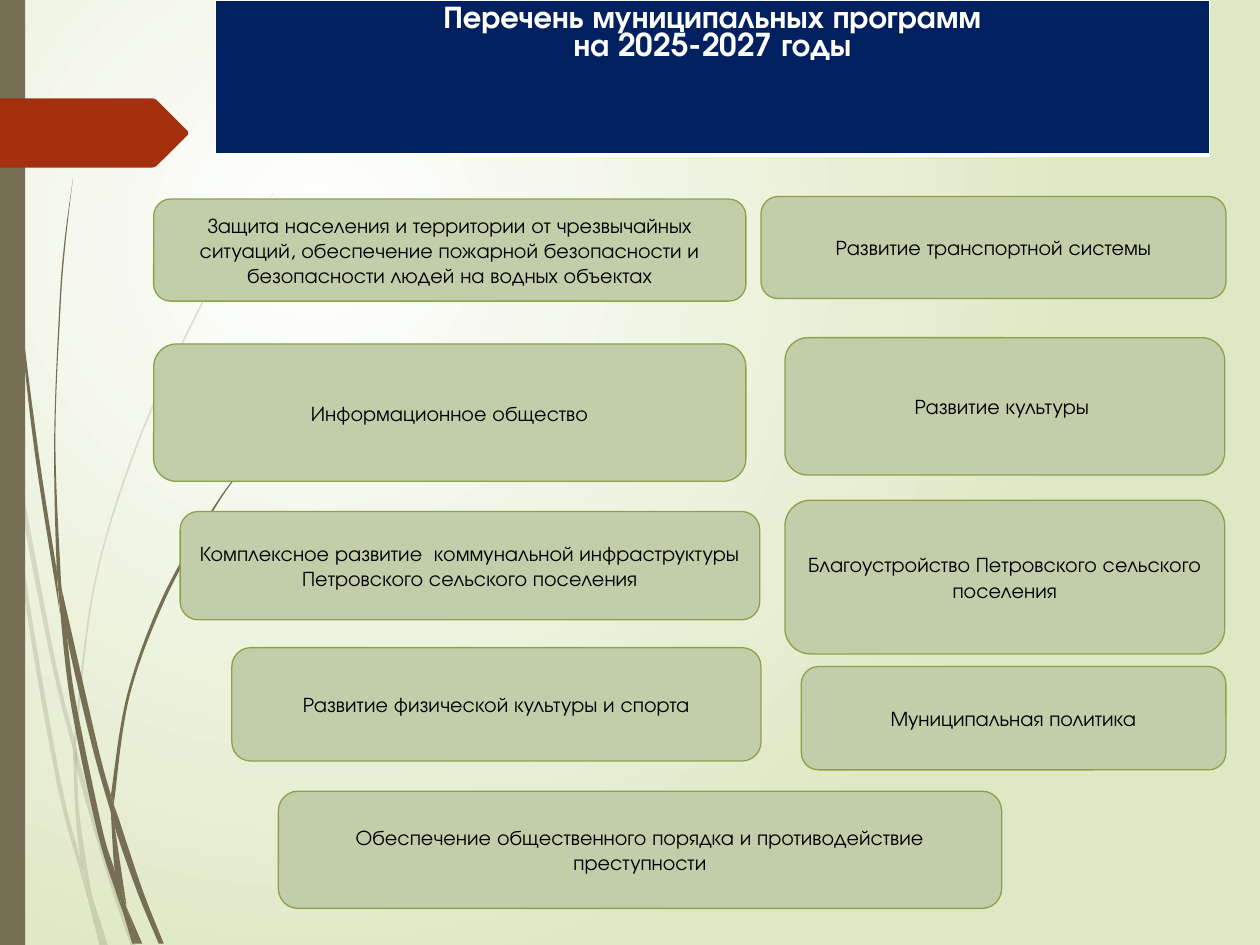
from typing import NamedTuple

from lxml.etree import SubElement
from pptx import Presentation
from pptx.dml.color import RGBColor as Rgb
from pptx.enum.lang import MSO_LANGUAGE_ID as Language
from pptx.enum.shapes import MSO_SHAPE as Shape
from pptx.enum.text import MSO_ANCHOR as Anchor, PP_ALIGN as Align
from pptx.oxml.ns import qn
from pptx.util import Inches, Pt

# The slide is a grid of 1000 columns by 750 rows
COLUMNS, ROWS = 1000, 750
CELL = Inches(10) // COLUMNS
COLOURS = {
    "white": "FFFFFF", "meadow": "DFE8C4", "bark": "766F54", "rust": "A53010",
    "navy": "002060", "sage": "C2CEA9", "leaf": "8BA249", "black": "000000",
}
TEXT_FORMAT = {"name": "TeX Gyre Adventor", "language_id": Language.RUSSIAN}
TITLE_FORMAT = TEXT_FORMAT | {"size": Pt(18), "bold": True}
LABEL_FORMAT = TEXT_FORMAT | {"size": Pt(12), "bold": False}
Points = list[tuple[int, int]]


class Area(NamedTuple):
    column: int
    row: int
    columns: int
    rows: int

    def lengths(self) -> list[int]:
        return [value * CELL for value in self]


class Program(NamedTuple):
    label: str
    area: Area


class Blade(NamedTuple):
    """A sliver of grass: one smooth edge out, one smooth edge back."""
    out: Points
    back: Points


PROGRAMS = [
    Program("Защита населения и территории от чрезвычайных ситуаций, обеспечение пожарной "
            "безопасности и безопасности людей на водных объектах", Area(122, 158, 470, 81)),
    Program("Развитие транспортной системы", Area(604, 156, 369, 81)),
    Program("Развитие культуры ", Area(623, 268, 349, 109)),
    Program("Благоустройство Петровского сельского поселения", Area(623, 397, 349, 122)),
    Program("Информационное общество", Area(122, 273, 470, 109)),
    Program("Комплексное развитие  коммунальной инфраструктуры Петровского сельского поселения",
            Area(143, 406, 460, 86)),
    Program("Развитие физической культуры и спорта", Area(184, 514, 420, 90)),
    Program("Муниципальная политика", Area(636, 529, 337, 82)),
    Program("Обеспечение общественного порядка и противодействие преступности",
            Area(221, 628, 574, 93)),
]
PALE_GRASS = [
    Blade([(8, 350), (6, 322), (0, 282)], [(0, 299), (7, 344), (8, 350)]),
    Blade([(10, 345), (12, 376), (40, 522), (59, 599)], [(59, 586), (43, 520), (10, 345)]),
    Blade([(61, 596), (61, 610), (85, 694), (104, 751)], [(108, 751), (88, 692), (64, 607), (61, 596)]),
    Blade([(73, 711), (83, 751)], [(86, 751), (73, 711)]),
    Blade([(8, 350), (19, 470), (45, 621), (64, 693), (70, 714)],
          [(69, 707), (64, 683), (48, 619), (22, 469), (12, 376), (8, 350)]),
    Blade([(58, 599), (60, 646), (64, 683), (67, 692), (73, 711)],
          [(72, 706), (63, 646), (61, 610), (58, 599)]),
    Blade([(61, 596), (61, 584), (76, 462), (111, 349), (159, 245), (187, 198), (201, 175), (217, 154)],
          [(217, 153), (201, 175), (186, 197), (158, 244), (110, 348), (75, 461), (59, 584), (59, 586)]),
    Blade([(70, 714), (79, 751)], [(82, 751), (70, 714)]),
    Blade([(61, 608), (61, 610), (61, 596), (59, 586)], [(58, 599), (61, 608)]),
    Blade([(65, 683), (69, 707), (70, 714), (82, 751)], [(83, 751), (73, 711), (67, 692)]),
]
DARK_GRASS = [
    Blade([(2, 0), (3, 48), (5, 110), (14, 233), (27, 355), (46, 477), (47, 481)],
          [(45, 457), (45, 453), (30, 355), (15, 232), (6, 109), (4, 48), (3, 0)]),
    Blade([(50, 472), (53, 505), (73, 592), (88, 645)], [(88, 631), (77, 590), (50, 472)]),
    Blade([(91, 641), (91, 656), (109, 708), (126, 749)], [(130, 749), (113, 706), (94, 649), (91, 641)]),
    Blade([(47, 477), (56, 557), (77, 659), (92, 708), (97, 722)],
          [(96, 717), (91, 691), (81, 657), (60, 556), (53, 505), (47, 477)]),
    Blade([(50, 472), (48, 453), (44, 349), (48, 245), (52, 193), (58, 141)],
          [(58, 141), (51, 193), (47, 245), (43, 349), (45, 449), (49, 472)]),
    Blade([(100, 719), (110, 749)], [(113, 749), (100, 719)]),
    Blade([(47, 477), (53, 505), (50, 472)], [(49, 472), (45, 449), (45, 453), (47, 477)]),
    Blade([(91, 641), (91, 633), (103, 552), (131, 476), (169, 406), (191, 374), (203, 359), (216, 344)],
          [(215, 344), (203, 358), (191, 373), (168, 405), (129, 474), (101, 551), (88, 631)]),
    Blade([(97, 722), (105, 749)], [(108, 749), (97, 722)]),
    Blade([(88, 645), (91, 691), (96, 706), (100, 719)], [(100, 716), (91, 656), (90, 651), (88, 645)]),
    Blade([(88, 631), (88, 645), (90, 651), (91, 656)], [(91, 641), (88, 631)]),
    Blade([(91, 691), (96, 717), (97, 722), (108, 749)], [(110, 749), (100, 719), (96, 706)]),
]
ARROW = [(0, 78), (121, 78), (124, 79), (149, 104), (149, 107), (124, 132), (121, 133), (0, 133)]


def colour(name: str) -> Rgb:
    return Rgb.from_string(COLOURS[name])


def paint(item, fill: str, line: str | None = None) -> None:
    item.shadow.inherit = False
    item.fill.solid()
    item.fill.fore_color.rgb = colour(fill)
    if line:
        item.line.color.rgb = colour(line)
        item.line.width = Pt(0.75)
    else:
        item.line.fill.background()


def write(frame, lines: list[str], formats: dict, ink: str, spacing: float | None = None) -> None:
    frame.word_wrap = True
    for index, line in enumerate(lines):
        para = frame.add_paragraph() if index else frame.paragraphs[0]
        para.alignment, para.line_spacing = Align.CENTER, spacing
        span = para.add_run()
        span.text = line
        for name, value in formats.items():
            setattr(span.font, name, value)
        span.font.color.rgb = colour(ink)


def draw_outline(shapes, points: Points, fill: str):
    builder = shapes.build_freeform(*points[0], scale=CELL)
    builder.add_line_segments(points[1:], close=True)
    outline = builder.convert_to_shape()
    paint(outline, fill)
    return outline


def bend(lines: list, edge: Points, left: int, top: int) -> None:
    """Turn the straight segments of an edge into Bezier curves."""
    padded = [edge[0], *edge, edge[-1]]
    for line, a, b, c, d in zip(lines, padded, padded[1:], padded[2:], padded[3:]):
        first = [q + (r - p) / 6 for p, q, r in zip(a, b, c)]
        second = [q - (r - p) / 6 for p, q, r in zip(b, c, d)]
        line.tag = qn("a:cubicBezTo")
        line.remove(line[0])
        for x, y in (first, second, c):
            SubElement(line, qn("a:pt"), x=str(round((x - left) * CELL)), y=str(round((y - top) * CELL)))


def draw_grass(page, blades: list[Blade], opacity: int) -> None:
    group = page.shapes.add_group_shape()
    for blade in blades:
        points = blade.out + blade.back
        outline = draw_outline(group.shapes, points, "bark")
        left, top = (min(axis) for axis in zip(*points))
        route = outline._element.find(".//" + qn("a:path"))
        for side in ("w", "h"):
            route.set(side, str(int(route.get(side)) * CELL))
        for point in route.iter(qn("a:pt")):
            for axis in ("x", "y"):
                point.set(axis, str(int(point.get(axis)) * CELL))
        lines = route.findall(qn("a:lnTo"))
        bend(lines, blade.out, left, top)
        bend(lines[len(blade.out):], blade.back, left, top)
        tint = outline._element.spPr.find(qn("a:solidFill"))[0]
        SubElement(tint, qn("a:alpha"), val=str(opacity * 1000))


def draw_background(page) -> None:
    fill = page.background.fill
    fill.gradient()
    for stop, name in zip(fill.gradient_stops, ("white", "meadow")):
        stop.color.rgb = colour(name)
    gradient = page._element.find(".//" + qn("a:gradFill"))
    gradient.remove(gradient.find(qn("a:lin")))
    glow = SubElement(gradient, qn("a:path"), path="circle")
    SubElement(glow, qn("a:fillToRect"), l="50000", t="50000", r="100000", b="100000")


def draw_title(page, lines: list[str], area: Area) -> None:
    cell = page.shapes.add_table(1, 1, *area.lengths()).table.cell(0, 0)
    write(cell.text_frame, lines, TITLE_FORMAT, "white", spacing=0.95)
    for side, width in {"L": 1, "R": 1, "T": 1, "B": 3}.items():
        border = SubElement(cell._tc.get_or_add_tcPr(), qn(f"a:ln{side}"), w=str(Pt(width)))
        SubElement(SubElement(border, qn("a:solidFill")), qn("a:srgbClr"), val=COLOURS["white"])
    cell.fill.solid()
    cell.fill.fore_color.rgb = colour("navy")


def draw_program(page, program: Program) -> None:
    box = page.shapes.add_shape(Shape.ROUNDED_RECTANGLE, *program.area.lengths())
    paint(box, "sage", "leaf")
    box.text_frame.vertical_anchor = Anchor.MIDDLE
    write(box.text_frame, [program.label], LABEL_FORMAT, "black")


deck = Presentation()
deck.slide_width, deck.slide_height = COLUMNS * CELL, ROWS * CELL
page = deck.slides.add_slide(deck.slide_layouts[6])
# Backdrop: glow, grass, side bar and arrow
draw_background(page)
draw_grass(page, PALE_GRASS, 20)
draw_grass(page, DARK_GRASS, 100)
paint(page.shapes.add_shape(Shape.RECTANGLE, *Area(0, 0, 20, ROWS).lengths()), "bark")
draw_outline(page.shapes, ARROW, "rust")
# Title and programs
draw_title(page, ["Перечень муниципальных программ", "на 2025-2027 годы"], Area(171, 0, 789, 123))
for program in PROGRAMS:
    draw_program(page, program)
deck.save("out.pptx")
